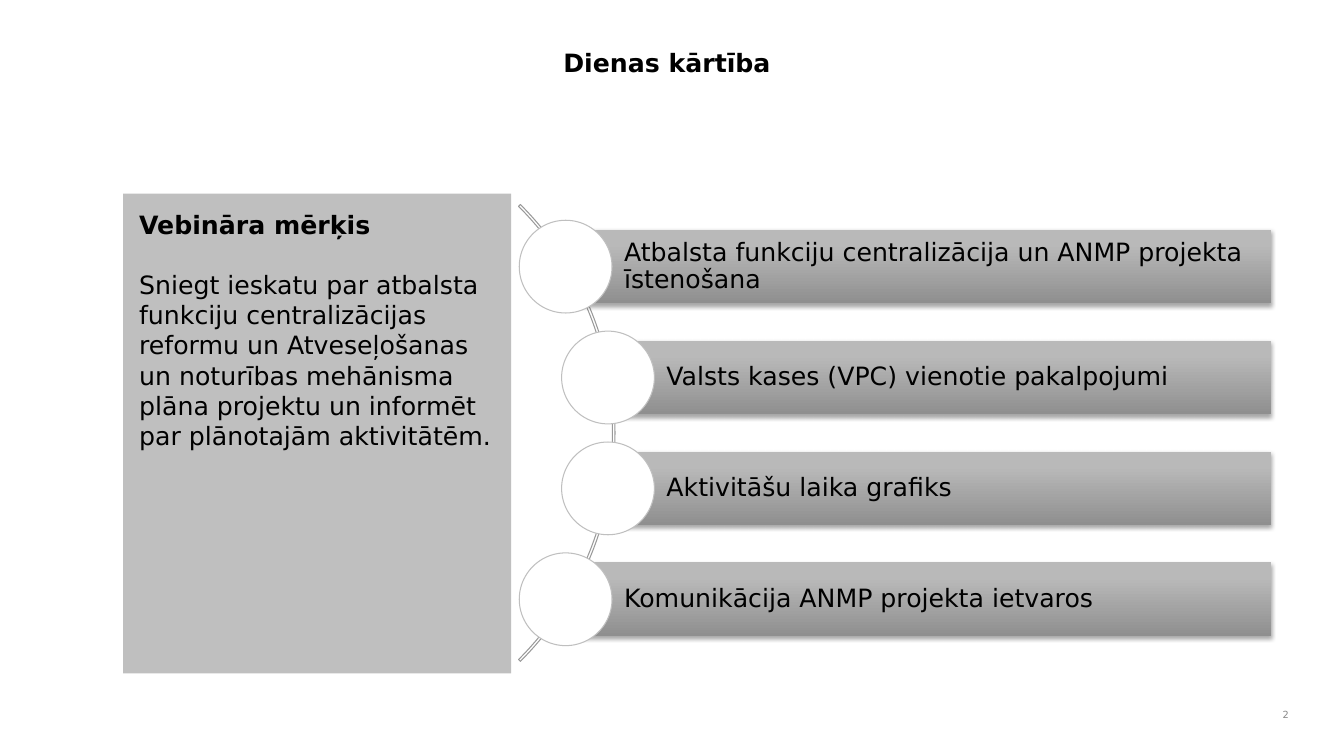
from pptx import Presentation
from pptx.dml.color import RGBColor
from pptx.enum.shapes import MSO_SHAPE
from pptx.enum.text import MSO_ANCHOR, PP_ALIGN
from pptx.oxml import parse_xml
from pptx.oxml.ns import nsdecls, qn
from pptx.util import Inches, Pt

FONT = "DejaVu Sans"
AGENDA = [
    "Atbalsta funkciju centralizācija un ANMP projekta īstenošana",
    "Valsts kases (VPC) vienotie pakalpojumi",
    "Aktivitāšu laika grafiks",
    "Komunikācija ANMP projekta ietvaros",
]
GOAL_HEADING = "Vebināra mērķis"
GOAL = (
    "Sniegt ieskatu par atbalsta funkciju centralizācijas reformu un "
    "Atveseļošanas un noturības\u00a0mehānisma plāna projektu un informēt "
    "par plānotajām aktivitātēm."
)
BAR_STOPS = [(0, "8F8F8F"), (80, "B9B9B9"), (100, "BABABA")]
BAR_LEFTS = [5.61, 6.03, 6.03, 5.61]
BAR_RIGHT, BAR_TOP, BAR_HEIGHT, BAR_PITCH = 12.61, 2.28, 0.73, 1.1
CIRCLE = 0.92


def color(value):
    return RGBColor.from_string(value)


def apply(target, values):
    for name, value in values.items():
        setattr(target, name, value)


def set_frame(frame, insets, anchor=MSO_ANCHOR.TOP):
    sides = ("margin_left", "margin_top", "margin_right", "margin_bottom")
    apply(frame, dict(zip(sides, map(Inches, insets))))
    apply(frame, {"word_wrap": True, "vertical_anchor": anchor})


def write(para, text, size=18, bold=False, hex_color="000000", **layout):
    """Fill a paragraph with one formatted span and return the span."""
    apply(para, {"alignment": PP_ALIGN.LEFT, **layout})
    span = para.add_run()
    span.text = text
    apply(span.font, {"name": FONT, "size": Pt(size), "bold": bold})
    span.font.color.rgb = color(hex_color)
    return span


def add_shape(page, kind, left, top, width, height, fill=None, line=None):
    shape = page.shapes.add_shape(kind, *map(Inches, (left, top, width, height)))
    shape.shadow.inherit = False
    if fill:
        shape.fill.solid()
        shape.fill.fore_color.rgb = color(fill)
    else:
        shape.fill.background()
    if line:
        shape.line.color.rgb = color(line)
        shape.line.width = Pt(0.75)
    else:
        shape.line.fill.background()
    return shape


def set_gradient(shape, stops, angle):
    shape.fill.gradient()
    shape.fill.gradient_angle = angle
    stop_list = shape._element.spPr.find(qn("a:gradFill")).find(qn("a:gsLst"))
    for stop in list(stop_list):
        stop_list.remove(stop)
    for percent, value in stops:
        stop_list.append(parse_xml(
            f'<a:gs {nsdecls("a")} pos="{percent * 1000}">'
            f'<a:srgbClr val="{value}"/></a:gs>'))


def set_shadow(shape):
    effects = shape._element.spPr.find(qn("a:effectLst"))
    effects.append(parse_xml(
        f'<a:outerShdw {nsdecls("a")} blurRad="{Pt(3.1)}" dist="{Pt(1.8)}" '
        'dir="5400000" rotWithShape="0"><a:srgbClr val="000000">'
        '<a:alpha val="35000"/></a:srgbClr></a:outerShdw>'))


def add_title(page, text):
    title = page.shapes.title
    apply(title, {"left": Inches(2.68), "top": Inches(0.42),
                  "width": Inches(7.87), "height": Inches(1.13)})
    set_frame(title.text_frame, (0.1, 0.05, 0.1, 0.05))
    write(title.text_frame.paragraphs[0], text, bold=True,
          alignment=PP_ALIGN.CENTER)


def add_arc(page):
    arc = add_shape(page, MSO_SHAPE.BLOCK_ARC, -0.31, 1.09, 6.41, 6.41,
                    line="999999")
    for index, value in enumerate((189, 27, 0.004)):
        arc.adjustments[index] = value


def add_agenda_item(page, text, left, top):
    bar = add_shape(page, MSO_SHAPE.RECTANGLE, left, top, BAR_RIGHT - left,
                    BAR_HEIGHT)
    set_gradient(bar, BAR_STOPS, 90)
    set_shadow(bar)
    set_frame(bar.text_frame, (0.58, 0.05, 0.05, 0.05), MSO_ANCHOR.MIDDLE)
    write(bar.text_frame.paragraphs[0], text, line_spacing=0.9)
    add_shape(page, MSO_SHAPE.OVAL, left - CIRCLE / 2,
              top + (BAR_HEIGHT - CIRCLE) / 2, CIRCLE, CIRCLE,
              "FFFFFF", "BFBFBF")


def add_goal_panel(page):
    panel = add_shape(page, MSO_SHAPE.RECTANGLE, 1.22, 1.92, 3.85, 4.76, "BFBFBF")
    frame = panel.text_frame
    set_frame(frame, (0.16, 0.16, 0.16, 0.05))
    write(frame.paragraphs[0], GOAL_HEADING, bold=True, space_after=Pt(21))
    write(frame.add_paragraph(), GOAL)


def add_page_number(page, number):
    box = page.shapes.add_textbox(*map(Inches, (12.44, 6.92, 0.44, 0.33)))
    set_frame(box.text_frame, (0.1, 0.05, 0.1, 0.05), MSO_ANCHOR.MIDDLE)
    write(box.text_frame.paragraphs[0], number, size=7, hex_color="898989",
          alignment=PP_ALIGN.RIGHT)


def main():
    deck = Presentation()
    apply(deck, {"slide_width": Inches(13.33), "slide_height": Inches(7.5)})
    page = deck.slides.add_slide(deck.slide_layouts[5])
    add_title(page, "Dienas kārtība")
    add_arc(page)
    for index, (text, left) in enumerate(zip(AGENDA, BAR_LEFTS)):
        add_agenda_item(page, text, left, BAR_TOP + index * BAR_PITCH)
    add_page_number(page, "2")
    add_goal_panel(page)
    deck.save("out.pptx")


if __name__ == "__main__":
    main()
